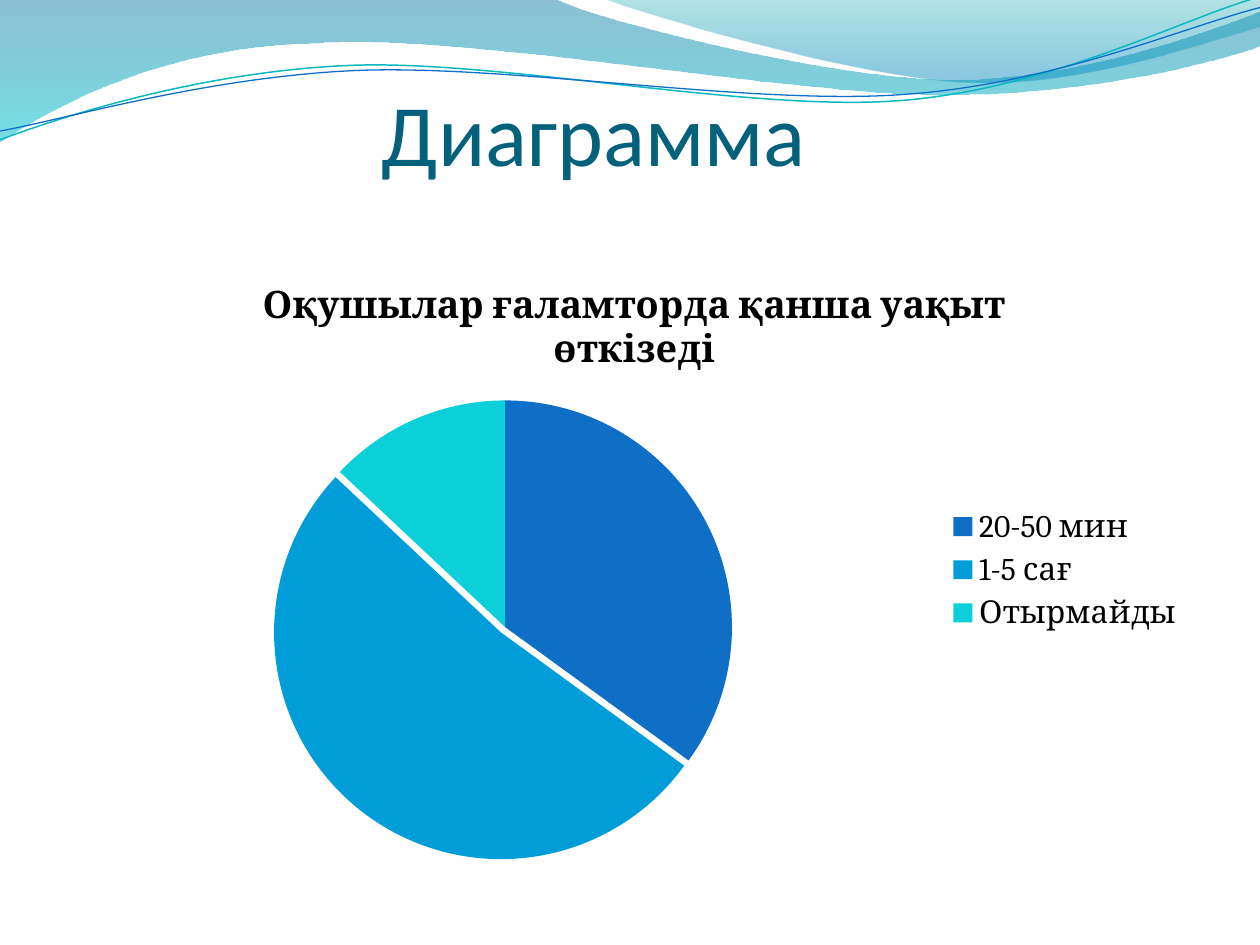
from lxml import etree
from pptx import Presentation, util as u
from pptx.chart.data import CategoryChartData
from pptx.dml.color import RGBColor
from pptx.enum import chart as ch, text
from pptx.oxml.ns import qn

WIDTH, HEIGHT = 10, 7.5

BLACK = RGBColor(0x00, 0x00, 0x00)
TITLE_TEAL = RGBColor(0x04, 0x61, 0x7B)
DEEP_BLUE = RGBColor(0x00, 0x74, 0xA1)
TURQUOISE = RGBColor(0x00, 0xC6, 0xCF)
SEA_GREEN = RGBColor(0x00, 0xA1, 0xA9)
SKY_BLUE = RGBColor(0x00, 0x8B, 0xBF)
LINE_TEAL = RGBColor(0x0A, 0xB8, 0xBF)
BLUE = RGBColor(0x0F, 0x6F, 0xC6)
AZURE = RGBColor(0x00, 0x9D, 0xD9)
CYAN = RGBColor(0x0B, 0xD0, 0xD9)

LONG_WAVE = [
    (0, 0), (4.4, -0.01),
    (4.76, 0.17, 6.64, 0.63, 7.58, 0.63), (8.53, 0.63, 9.58, 0.26, 10, 0.09),
    (10.01, 0.36),
    (9.83, 0.44, 8.7, 0.76, 7.46, 0.75), (6.22, 0.75, 3.82, 0.28, 2.57, 0.34),
    (1.29, 0.36, 0.46, 0.83, -0.01, 1.13), (0, 0),
]
CORNER_WAVE = [
    (4.79, -0.01),
    (5.09, 0.11, 6.82, 0.62, 7.69, 0.65), (8.56, 0.69, 9.61, 0.32, 10, 0.21),
    (10, 0), (4.79, -0.01),
]
TEAL_STRAND = [
    (0, 1.11),
    (0.48, 0.93, 1.58, 0.57, 2.77, 0.52), (3.95, 0.47, 5.93, 0.89, 7.13, 0.8),
    (8.33, 0.71, 9.38, 0.15, 9.98, -0.02),
]
BLUE_STRAND = [
    (0, 1.04),
    (0.47, 0.96, 1.64, 0.61, 2.83, 0.56), (4.03, 0.51, 5.97, 0.84, 7.17, 0.75),
    (8.36, 0.67, 9.41, 0.21, 10, 0.06),
]


def share_box(left, top, width, height):
    return (u.Inches(left * WIDTH), u.Inches(top * HEIGHT),
            u.Inches(width * WIDTH), u.Inches(height * HEIGHT))


def add_outline(slide, segments, close):
    points = [(u.Inches(segment[i]), u.Inches(segment[i + 1]))
              for segment in segments for i in range(0, len(segment), 2)]
    builder = slide.shapes.build_freeform(*points[0])
    builder.add_line_segments(points[1:], close=close)
    outline = builder.convert_to_shape()
    outline.shadow.inherit = False
    steps = iter(list(outline.element.iter(qn("a:lnTo"))))
    for segment in segments[1:]:
        first = next(steps)
        if len(segment) == 6:
            first.addprevious(bend := etree.Element(qn("a:cubicBezTo")))
            for step in (first, next(steps), next(steps)):
                bend.append(step[0])
                step.getparent().remove(step)
    return outline


def add_wave(slide, segments, stops):
    wave = add_outline(slide, segments, close=True)
    wave.line.fill.background()
    wave.fill.gradient()
    wave.fill.gradient_angle = 270
    for stop, (position, color, _) in zip(wave.fill.gradient_stops, stops):
        stop.position = position
        stop.color.rgb = color
    for tint, (_, _, opacity) in zip(wave.element.spPr.iter(qn("a:srgbClr")), stops):
        etree.SubElement(tint, qn("a:alpha"), val=str(opacity * 1000))


def add_strand(slide, segments, color, weight):
    strand = add_outline(slide, segments, close=False)
    strand.fill.background()
    strand.line.color.rgb = color
    strand.line.width = u.Pt(weight)


def write_text(frame, words, *, font, size, color, bold=False):
    run = frame.paragraphs[0].add_run()
    run.text = words
    run.font.name = font
    run.font.size = u.Pt(size)
    run.font.bold = bold
    run.font.color.rgb = color


def add_heading(slide, words, box):
    frame = slide.shapes.add_textbox(*share_box(*box)).text_frame
    frame.word_wrap = True
    frame.vertical_anchor = text.MSO_ANCHOR.BOTTOM
    frame.margin_left = frame.margin_right = frame.margin_bottom = 0
    frame.margin_top = u.Inches(0.05)
    write_text(frame, words, font="Calibri", size=50, color=TITLE_TEAL)


def pin_layout(part, **settings):
    layout = part.find(qn("c:layout"))
    if layout is None:
        layout = etree.Element(qn("c:layout"))
        before = part.find(qn("c:tx"))
        if before is None:
            part.insert(0, layout)
        else:
            before.addnext(layout)
    for old in list(layout):
        layout.remove(old)
    manual = etree.SubElement(layout, qn("c:manualLayout"))
    for name, value in settings.items():
        etree.SubElement(manual, qn(f"c:{name}"), val=str(value))


def add_pie(slide, title, answers, box, pulled, distance):
    data = CategoryChartData()
    data.categories = [label for label, _, _ in answers]
    data.add_series("Series 1", [value for _, value, _ in answers])
    pie = slide.shapes.add_chart(ch.XL_CHART_TYPE.PIE, *share_box(*box), data).chart
    pie.font.name = "Cambria"
    pie.font.size = u.Pt(18)
    pie.font.color.rgb = BLACK
    pie.has_title = True
    write_text(pie.chart_title.text_frame, title,
               font="Cambria", size=21.6, color=BLACK, bold=True)
    pie.has_legend = True
    pie.legend.position = ch.XL_LEGEND_POSITION.RIGHT
    pie.legend.include_in_layout = False
    plot = pie.plots[0]
    plot.vary_by_categories = True
    series = plot.series[0]
    for index, (_, _, color) in enumerate(answers):
        fill = series.points[index].format.fill
        fill.solid()
        fill.fore_color.rgb = color
    pulled_slice = series._element.findall(qn("c:dPt"))[pulled]
    explosion = etree.Element(qn("c:explosion"), val=str(distance))
    pulled_slice.find(qn("c:spPr")).addprevious(explosion)
    pin_layout(pie.chart_title._element, xMode="edge", yMode="edge", x=0.17, y=0.01)
    pin_layout(next(pie._chartSpace.iter(qn("c:plotArea"))), layoutTarget="inner",
               xMode="edge", yMode="edge", x=0.19, y=0.22, w=0.4, h=0.75)


def main():
    deck = Presentation()
    deck.slide_width, deck.slide_height = u.Inches(WIDTH), u.Inches(HEIGHT)
    slide = deck.slides.add_slide(deck.slide_layouts[6])
    add_wave(slide, LONG_WAVE, [(0, DEEP_BLUE, 45), (1, TURQUOISE, 55)])
    add_wave(slide, CORNER_WAVE, [(0, SEA_GREEN, 30), (0.8, SKY_BLUE, 45)])
    add_strand(slide, TEAL_STRAND, LINE_TEAL, 0.85)
    add_strand(slide, BLUE_STRAND, BLUE, 0.75)
    add_heading(slide, "Диаграмма", (0.303, 0.07, 0.647, 0.125))
    add_pie(slide, "Оқушылар ғаламторда қанша уақыт өткізеді",
            [("20-50 мин", 35, BLUE), ("1-5 сағ", 52, AZURE), ("Отырмайды", 13, CYAN)],
            (0.05, 0.283, 0.9, 0.64), pulled=1, distance=3)
    deck.save("out.pptx")


if __name__ == "__main__":
    main()
